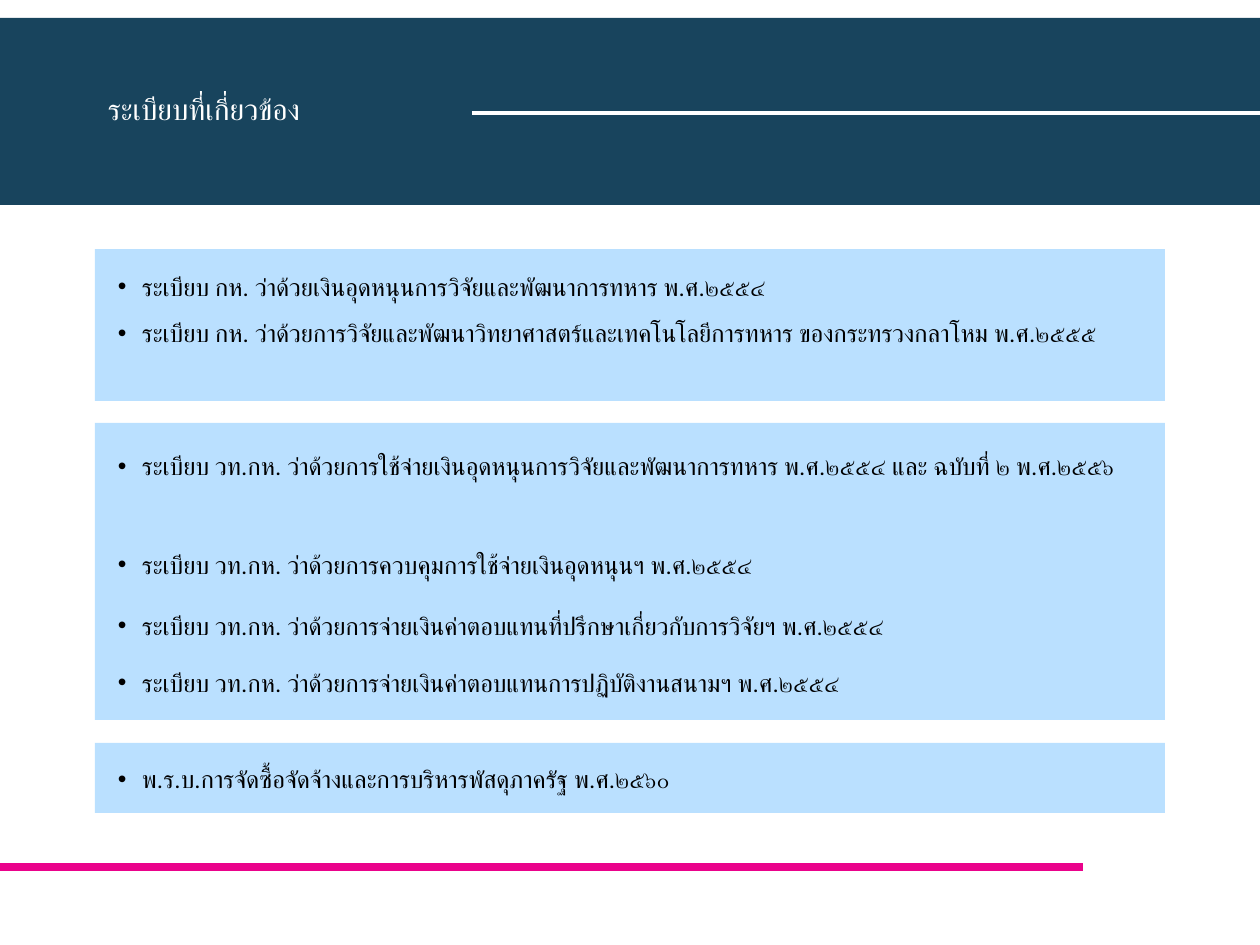
from dataclasses import dataclass

from lxml import etree
from pptx import Presentation
from pptx.dml.color import RGBColor
from pptx.enum.shapes import MSO_CONNECTOR, MSO_SHAPE
from pptx.enum.text import MSO_ANCHOR, MSO_AUTO_SIZE, PP_ALIGN
from pptx.oxml.ns import qn
from pptx.util import Pt

SCALE = 7743  # EMU in one px
RECT = MSO_SHAPE.RECTANGLE
LINE = MSO_CONNECTOR.STRAIGHT
TOP = MSO_ANCHOR.TOP
FIXED = MSO_AUTO_SIZE.NONE
LEFT, CENTER = PP_ALIGN.LEFT, PP_ALIGN.CENTER
FONT = "Roboto"
NAVY, SKY, PINK = "18445D", "BAE0FF", "EA028B"
WHITE, BLACK = "FFFFFF", "000000"


@dataclass
class Box:
    x: int
    y: int
    w: int
    h: int
    fill: str = SKY


@dataclass
class Rule:
    start: int
    end: int
    y: int
    color: str
    width: float


@dataclass
class Item:
    text: str
    gap: float  # points above the line


BOXES = [
    Box(-11, 18, 1271, 187, NAVY),
    Box(95, 249, 1070, 152),
    Box(95, 423, 1070, 297),
    Box(95, 743, 1070, 70),
]
RULES = [
    Rule(472, 1265, 113, WHITE, 3),
    Rule(-11, 1083, 867, PINK, 4.5),
]
ITEMS = [
    Item("ระเบียบ กห. ว่าด้วยเงินอุดหนุนการวิจัยและพัฒนาการทหาร พ.ศ.๒๕๕๔", 0),
    Item("ระเบียบ กห. ว่าด้วยการวิจัยและพัฒนาวิทยาศาสตร์และเทคโนโลยีการทหาร "
         "ของกระทรวงกลาโหม พ.ศ.๒๕๕๕", 4.5),
    Item("ระเบียบ วท.กห. ว่าด้วยการใช้จ่ายเงินอุดหนุนการวิจัยและพัฒนาการทหาร "
         "พ.ศ.๒๕๕๔ และ ฉบับที่ ๒ พ.ศ.๒๕๕๖", 57.5),
    Item("ระเบียบ วท.กห. ว่าด้วยการควบคุมการใช้จ่ายเงินอุดหนุนฯ พ.ศ.๒๕๕๔", 36),
    Item("ระเบียบ วท.กห. ว่าด้วยการจ่ายเงินค่าตอบแทนที่ปรึกษาเกี่ยวกับการวิจัยฯ "
         "พ.ศ.๒๕๕๔", 13.5),
    Item("ระเบียบ วท.กห. ว่าด้วยการจ่ายเงินค่าตอบแทนการปฏิบัติงานสนามฯ พ.ศ.๒๕๕๔", 11),
    Item("พ.ร.บ.การจัดซื้อจัดจ้างและการบริหารพัสดุภาครัฐ พ.ศ.๒๕๖๐", 35),
]


def px(n: int) -> int:
    return n * SCALE


def rgb(code: str) -> RGBColor:
    return RGBColor.from_string(code)


def draw_box(slide, box: Box) -> None:
    shape = slide.shapes.add_shape(RECT, px(box.x), px(box.y), px(box.w), px(box.h))
    shape.shadow.inherit = False
    shape.fill.solid()
    shape.fill.fore_color.rgb = rgb(box.fill)
    shape.line.fill.background()


def draw_rule(slide, rule: Rule) -> None:
    line = slide.shapes.add_connector(
        LINE, px(rule.start), px(rule.y), px(rule.end), px(rule.y))
    line.line.color.rgb = rgb(rule.color)
    line.line.width = Pt(rule.width)
    etree.SubElement(line._element.spPr, qn("a:effectLst"))


def place(holder, x: int, y: int, w: int, h: int):
    """Move a placeholder, strip its margins and put it in front."""
    holder.left, holder.top, holder.width, holder.height = map(px, (x, y, w, h))
    frame = holder.text_frame
    frame.margin_left = frame.margin_right = 0
    frame.margin_top = frame.margin_bottom = 0
    frame.vertical_anchor = TOP
    frame.auto_size = FIXED
    frame.word_wrap = True
    tree = holder._element.getparent()
    tree.append(holder._element)
    return frame


def style(para, size: int, color: str, pitch: float, align) -> None:
    para.alignment = align
    para.line_spacing = Pt(pitch)
    font = para.font
    font.size = Pt(size)
    font.name = FONT
    font.color.rgb = rgb(color)
    # Thai letters take the complex-script font
    props = para._p.pPr.find(qn("a:defRPr"))
    etree.SubElement(props, qn("a:cs"), typeface=FONT)


def fill_list(frame, items: list[Item]) -> None:
    for i, item in enumerate(items):
        para = frame.add_paragraph() if i else frame.paragraphs[0]
        para.text = item.text
        style(para, 15, BLACK, 23.8, LEFT)
        para.space_before = Pt(item.gap)
        para._p.pPr.set("marL", str(px(47)))
        para._p.pPr.set("indent", str(px(-24)))


def main() -> None:
    deck = Presentation()
    deck.slide_width, deck.slide_height = px(1260), px(945)
    slide = deck.slides.add_slide(deck.slide_layouts[1])
    for box in BOXES:
        draw_box(slide, box)
    for rule in RULES:
        draw_rule(slide, rule)

    title = place(slide.shapes.title, 95, 85, 218, 39)
    title.text = "ระเบียบที่เกี่ยวข้อง"
    style(title.paragraphs[0], 18, WHITE, 25.2, CENTER)

    body = place(slide.placeholders[1], 95, 262, 1070, 540)
    fill_list(body, ITEMS)
    deck.save("out.pptx")


if __name__ == "__main__":
    main()
